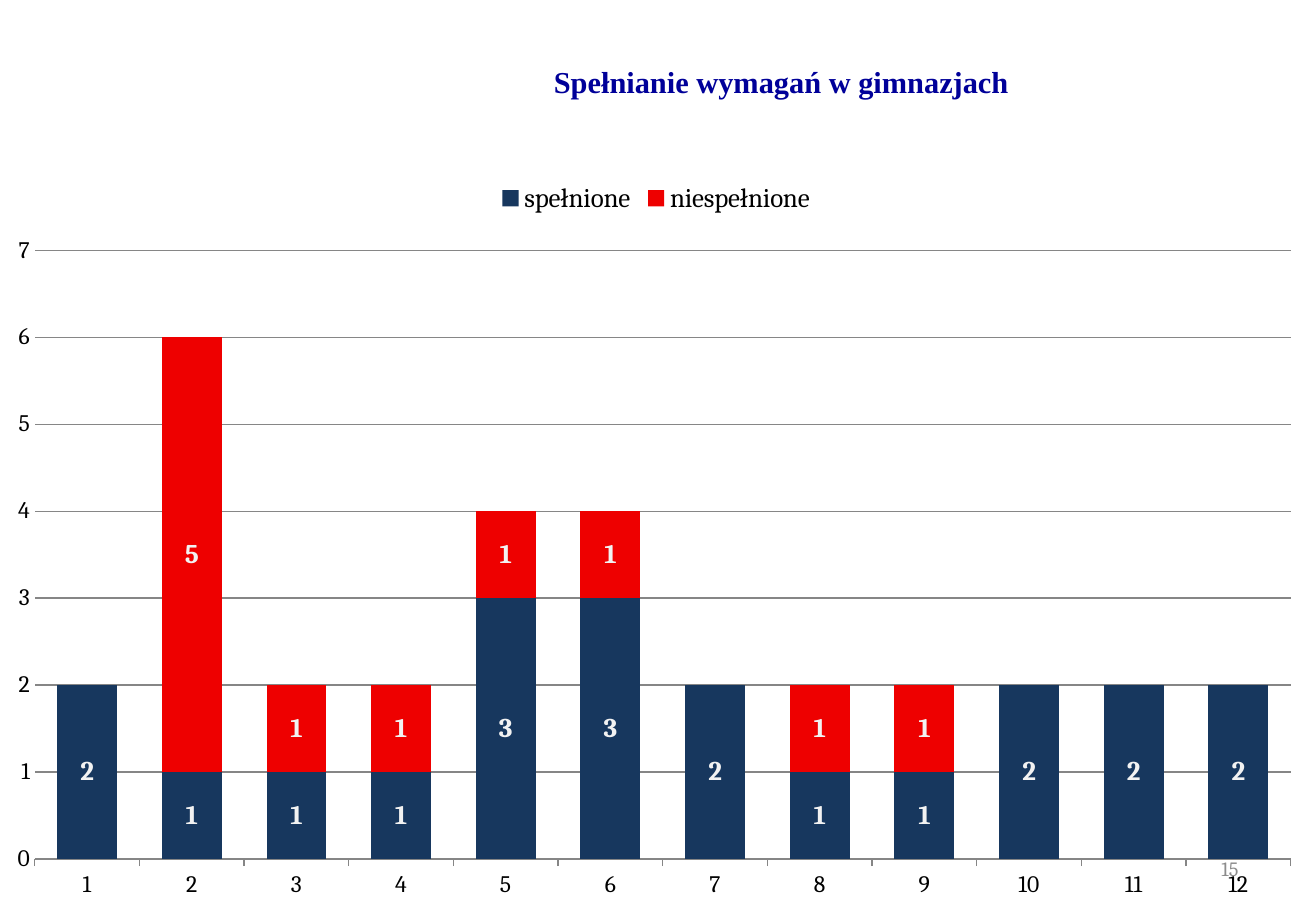
from dataclasses import dataclass

from lxml import etree
from pptx import Presentation
from pptx.chart.data import CategoryChartData
from pptx.dml.color import RGBColor
from pptx.enum.chart import (
    XL_CHART_TYPE,
    XL_LABEL_POSITION,
    XL_LEGEND_POSITION,
    XL_TICK_MARK,
)
from pptx.enum.text import MSO_ANCHOR, PP_ALIGN
from pptx.oxml.ns import qn
from pptx.util import Inches, Pt

STACKED = XL_CHART_TYPE.COLUMN_STACKED
LABEL_CENTER = XL_LABEL_POSITION.CENTER
LEGEND_TOP = XL_LEGEND_POSITION.TOP
TICK_NONE = XL_TICK_MARK.NONE
TICK_OUTSIDE = XL_TICK_MARK.OUTSIDE
MIDDLE = MSO_ANCHOR.MIDDLE
CENTER = PP_ALIGN.CENTER
RIGHT = PP_ALIGN.RIGHT


@dataclass(frozen=True)
class Theme:
    title_font: str = "Times New Roman"
    body_font: str = "Cambria"
    title_color: str = "000099"
    text_color: str = "000000"
    number_color: str = "8C8C8C"
    label_color: str = "F2F2F2"
    line_color: str = "868686"
    met_color: str = "17375E"
    unmet_color: str = "EE0000"
    title_size: int = 18
    number_size: int = 12
    axis_size: int = 14
    legend_size: int = 16
    label_size: int = 16


@dataclass(frozen=True)
class Area:
    left: float
    top: float
    width: float
    height: float

    def lengths(self) -> list:
        return [Inches(v) for v in (self.left, self.top, self.width, self.height)]


@dataclass(frozen=True)
class Requirement:
    name: str
    counts: tuple
    color: str


THEME = Theme()
REQUIREMENTS = (
    Requirement("spełnione", (2, 1, 1, 1, 3, 3, 2, 1, 1, 2, 2, 2), THEME.met_color),
    Requirement(
        "niespełnione",
        (None, 5, 1, 1, 1, 1, None, 1, 1, None, None, None),
        THEME.unmet_color,
    ),
)


def set_font(font, name: str, size: int, color: str, bold: bool = False) -> None:
    font.name = name
    font.size = Pt(size)
    font.bold = bold
    font.color.rgb = RGBColor.from_string(color)


def add_text(page, text: str, *, area: Area, align, font: str, size: int,
             color: str, bold: bool = False) -> None:
    box = page.shapes.add_textbox(*area.lengths())
    frame = box.text_frame
    frame.word_wrap = True
    frame.vertical_anchor = MIDDLE
    para = frame.paragraphs[0]
    para.alignment = align
    span = para.add_run()
    span.text = text
    set_font(span.font, font, size, color, bold)


def style_axis(axis, tick_mark) -> None:
    axis.major_tick_mark = tick_mark
    axis.minor_tick_mark = TICK_NONE
    set_font(axis.tick_labels.font, THEME.body_font, THEME.axis_size, THEME.text_color)


def style_line(line) -> None:
    line.color.rgb = RGBColor.from_string(THEME.line_color)
    line.width = Pt(0.75)


def place_plot(chart, area: Area) -> None:
    plot_area = chart.plots[0]._element.getparent()
    for old in plot_area.findall(qn("c:layout")):
        plot_area.remove(old)
    layout = etree.Element(qn("c:layout"))
    manual = etree.SubElement(layout, qn("c:manualLayout"))
    settings = {
        "layoutTarget": "inner", "xMode": "edge", "yMode": "edge",
        "x": area.left, "y": area.top, "w": area.width, "h": area.height,
    }
    for name, value in settings.items():
        etree.SubElement(manual, qn(f"c:{name}")).set("val", str(value))
    plot_area.insert(0, layout)


def add_requirements_chart(page, area: Area) -> None:
    chart_data = CategoryChartData()
    chart_data.categories = [str(number) for number in range(1, 13)]
    for requirement in REQUIREMENTS:
        chart_data.add_series(requirement.name, requirement.counts)
    chart = page.shapes.add_chart(STACKED, *area.lengths(), chart_data).chart
    chart.has_title = False
    set_font(chart.font, THEME.body_font, 10, THEME.text_color)

    chart.has_legend = True
    chart.legend.position = LEGEND_TOP
    chart.legend.include_in_layout = False
    set_font(chart.legend.font, THEME.body_font, THEME.legend_size, THEME.text_color)

    style_axis(chart.category_axis, TICK_OUTSIDE)
    style_line(chart.category_axis.format.line)
    values = chart.value_axis
    style_axis(values, TICK_NONE)
    values.format.line.fill.background()
    values.minimum_scale, values.maximum_scale, values.major_unit = 0, 7, 1
    values.has_major_gridlines = True
    style_line(values.major_gridlines.format.line)

    plot = chart.plots[0]
    plot.gap_width = 75
    plot.overlap = 100
    plot.vary_by_categories = False
    for series, requirement in zip(plot.series, REQUIREMENTS):
        series.format.fill.solid()
        series.format.fill.fore_color.rgb = RGBColor.from_string(requirement.color)
        labels = series.data_labels
        labels.show_value = True
        labels.position = LABEL_CENTER
        set_font(labels.font, THEME.body_font, THEME.label_size, THEME.label_color, True)
    place_plot(chart, Area(0.03, 0.11, 0.95, 0.82))


def main() -> None:
    deck = Presentation()
    deck.slide_width = Inches(10.83)
    deck.slide_height = Inches(7.5)
    page = deck.slides.add_slide(deck.slide_layouts[6])
    add_text(page, "Spełnianie wymagań w gimnazjach", area=Area(2.18, 0.16, 8.5, 1.02),
             align=CENTER, font=THEME.title_font, size=THEME.title_size,
             color=THEME.title_color, bold=True)
    add_text(page, "15", area=Area(7.76, 6.95, 2.53, 0.4), align=RIGHT,
             font=THEME.body_font, size=THEME.number_size, color=THEME.number_color)
    add_requirements_chart(page, Area(-0.04, 1.39, 10.88, 6.11))
    deck.save("out.pptx")


if __name__ == "__main__":
    main()
